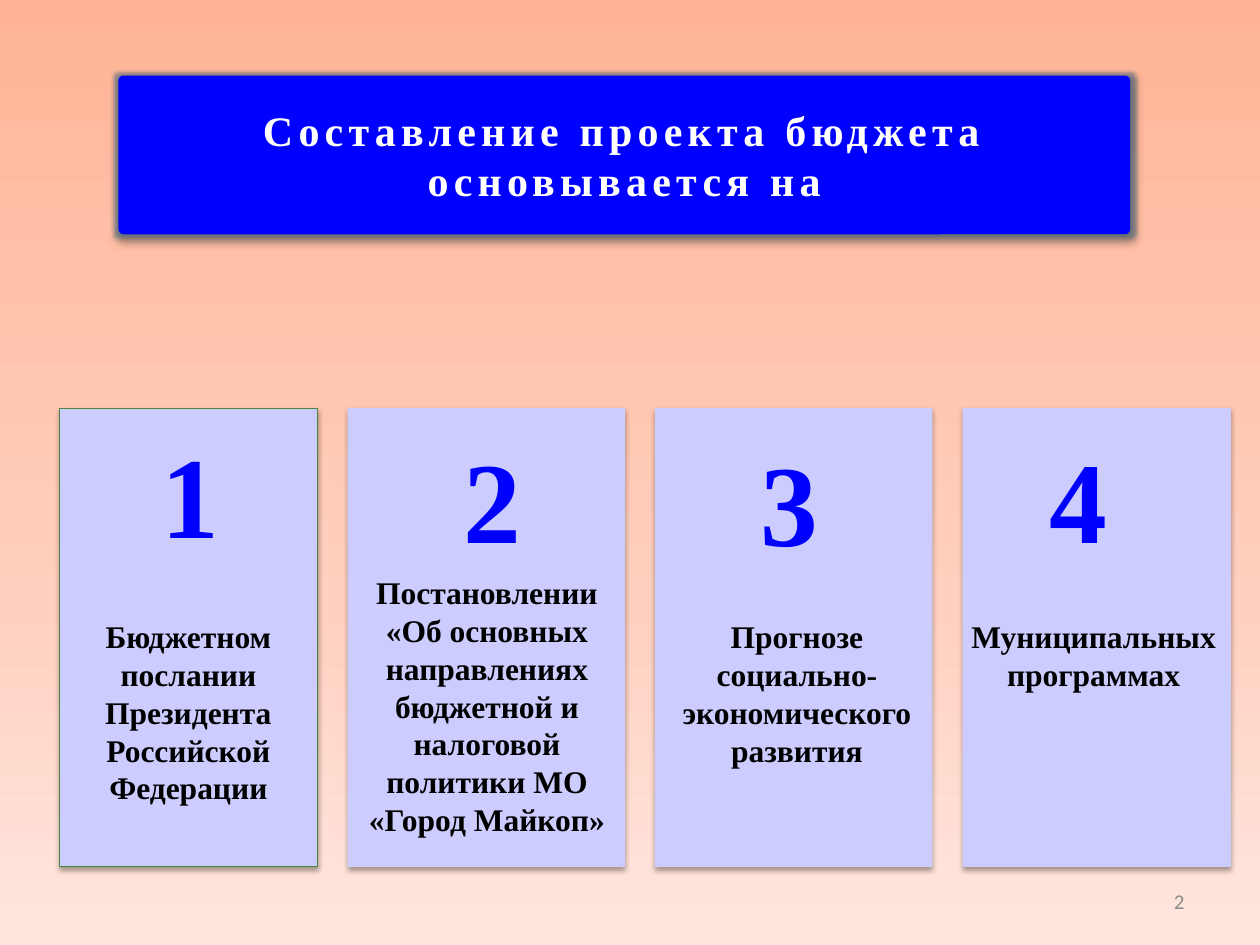
"""Build a slide on what the draft budget is based on."""
from copy import deepcopy

from lxml import etree
from pptx import Presentation
from pptx.dml.color import RGBColor
from pptx.enum.shapes import MSO_SHAPE
from pptx.enum.text import MSO_ANCHOR, PP_ALIGN
from pptx.oxml.ns import qn
from pptx.util import Inches, Pt

RECT, ROUND = MSO_SHAPE.RECTANGLE, MSO_SHAPE.ROUNDED_RECTANGLE
LEFT, CENTER, RIGHT = PP_ALIGN.LEFT, PP_ALIGN.CENTER, PP_ALIGN.RIGHT
TOP, MIDDLE = MSO_ANCHOR.TOP, MSO_ANCHOR.MIDDLE
SERIF = "Times New Roman"
COLORS = {
    "sky": "FFB496", "mid": "FFD0BF", "base": "FFE7E0",
    "card": "CCCCFF", "edge": "4B843F", "blue": "0000FF",
    "white": "FFFFFF", "black": "000000", "gray": "8C8C8C", "glow": "45697F",
}
RGB = {name: RGBColor.from_string(code) for name, code in COLORS.items()}


def add_panel(kind, box, fill, alpha, dist, glow=0):
    panel = slide.shapes.add_shape(kind, *map(Inches, box))
    panel.fill.solid()
    panel.fill.fore_color.rgb = RGB[fill]
    panel.line.fill.background()
    panel.shadow.inherit = False
    effects = panel.element.spPr.find(qn("a:effectLst"))
    layers = [("a:outerShdw", "black", alpha, {
        "blurRad": Pt(3.1), "dist": Pt(dist), "dir": 5400000, "rotWithShape": 0})]
    if glow:
        layers.insert(0, ("a:glow", "glow", 60, {"rad": Pt(glow)}))
    for tag, color, part, attrs in layers:
        layer = etree.SubElement(effects, qn(tag))
        for key, value in attrs.items():
            layer.set(key, str(value))
        tint = etree.SubElement(layer, qn("a:srgbClr"), val=COLORS[color])
        etree.SubElement(tint, qn("a:alpha"), val=str(part * 1000))
    return panel


def add_text(shape, text, size, color, align=CENTER, anchor=TOP, font=SERIF, bold=True):
    frame = shape.text_frame
    frame.word_wrap = True
    frame.vertical_anchor = anchor
    para = frame.paragraphs[0]
    para.alignment = align
    run = para.add_run()
    run.text = text
    run.font.size = Pt(size)
    run.font.name = font
    run.font.bold = bold
    run.font.color.rgb = RGB[color]
    return run


prs = Presentation()
prs.slide_width, prs.slide_height = Inches(10), Inches(7.5)
slide = prs.slides.add_slide(prs.slide_layouts[6])

back = slide.background.fill
back.gradient()
back.gradient_angle = 270
stops = slide.element.find(".//" + qn("a:gsLst"))
stops.insert(1, deepcopy(stops[0]))
for stop, color, place in zip(back.gradient_stops, ("sky", "mid", "base"), (0, 0.64, 1)):
    stop.color.rgb = RGB[color]
    stop.position = place

title = add_panel(ROUND, (0.94, 0.6, 8.03, 1.26), "blue", 38, 1.6, glow=5)
title.adjustments[0] = 0.032
run = add_text(title, "Составление проекта бюджета основывается на", 24, "white", anchor=MIDDLE)
run.font._element.set("spc", "300")

cards = [
    (0.47, 2.05, 1.18, 3.4, 0.47, 4.85, 2.05,
     "Бюджетном послании Президента Российской Федерации"),
    (2.76, 2.2, 3.58, 3.44, 2.76, 4.5, 2.21,
     "Постановлении «Об основных направлениях бюджетной и налоговой "
     "политики МО «Город Майкоп»"),
    (5.2, 2.2, 5.94, 3.46, 5.28, 4.85, 2.09,
     "Прогнозе социально-экономического развития"),
    (7.64, 2.13, 8.23, 3.44, 7.56, 4.85, 2.24, "Муниципальных программах"),
]
for num, (left, wide, num_x, num_y, text_x, text_y, text_w, text) in enumerate(cards, 1):
    card = add_panel(RECT, (left, 3.24, wide, 3.64), "card", 35, 1.8)
    if num == 1:
        card.line.color.rgb = RGB["edge"]
        card.line.width = Pt(0.75)
    box = slide.shapes.add_textbox(*map(Inches, (text_x, text_y, text_w, 1.84)))
    add_text(box, text, 18, "black")
    box = slide.shapes.add_textbox(*map(Inches, (num_x, num_y, 0.87, 1.02)))
    add_text(box, str(num), 66, "blue", LEFT, MIDDLE)

page = slide.shapes.add_textbox(*map(Inches, (7.17, 6.95, 2.33, 0.4)))
add_text(page, "2", 12, "gray", RIGHT, MIDDLE, "Calibri", False)

prs.save("out.pptx")
